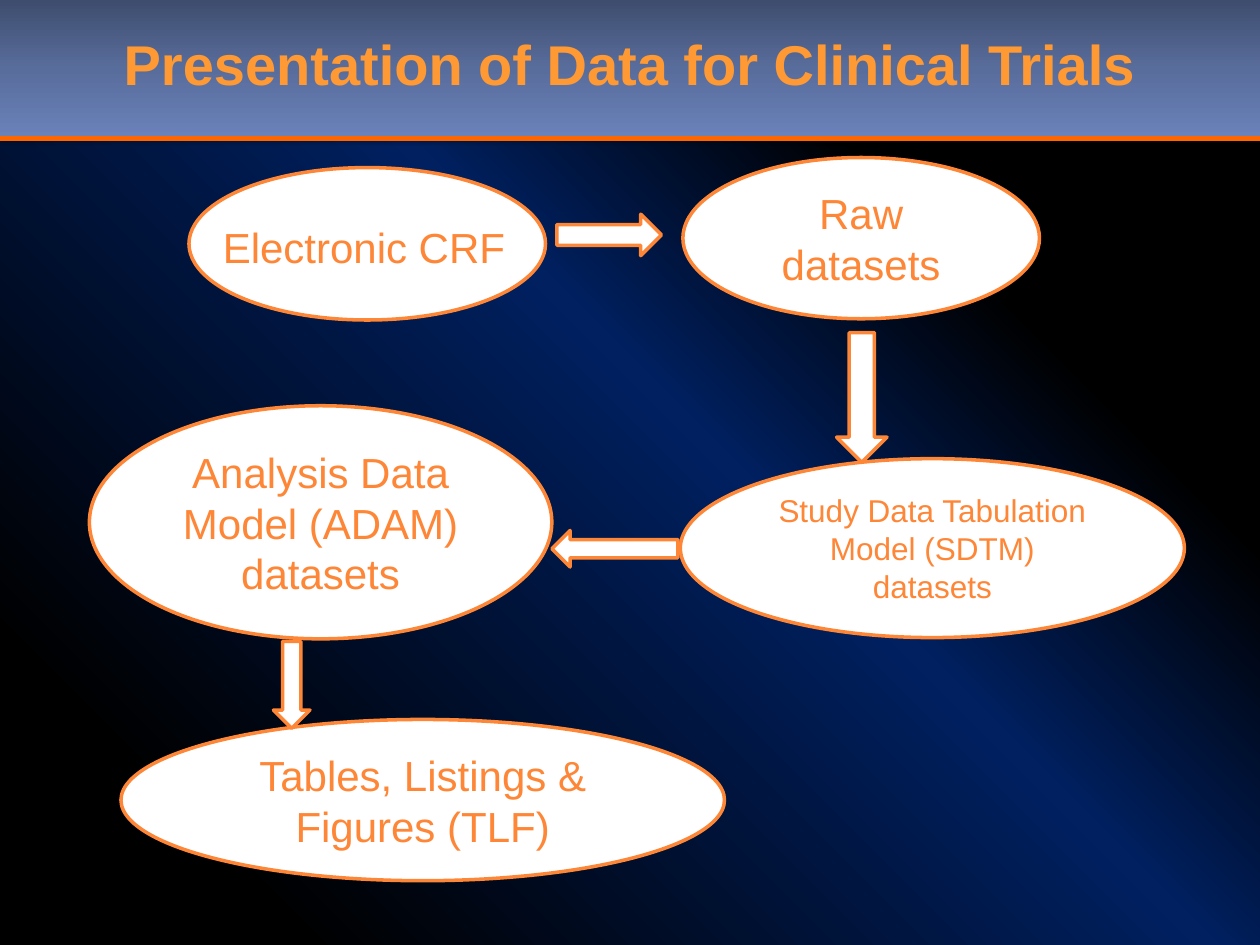
import pptx
import pptx.util
import pptx.dml.color
import pptx.enum.shapes
import pptx.enum.text
import pptx.oxml
import pptx.oxml.ns
from dataclasses import dataclass

Inches = pptx.util.Inches
Pt = pptx.util.Pt
SHAPE = pptx.enum.shapes.MSO_SHAPE
ALIGN = pptx.enum.text.PP_ALIGN
ANCHOR = pptx.enum.text.MSO_ANCHOR
qn = pptx.oxml.ns.qn
NAMESPACE = 'xmlns:a="http://schemas.openxmlformats.org/drawingml/2006/main"'


@dataclass(frozen=True)
class Theme:
    font: str = "Arial"
    title_color: str = "FF9933"
    rule_color: str = "FF6600"
    accent: str = "FE8637"
    node_fill: str = "FFFFFF"
    shadow: str = "000000"
    background: tuple = ((14, "000000"), (55, "002060"), (75, "000000"))
    banner: tuple = ((0, "3E4D6E"), (50, "596D9C"), (100, "6982B9"))
    title_size: int = 32
    node_size: int = 24
    small_size: int = 18
    outline: int = 2
    rule_width: int = 3


THEME = Theme()


def rgb(value):
    return pptx.dml.color.RGBColor.from_string(value)


def inches(box):
    return [Inches(length) for length in box]


def apply_gradient(fill, owner, stops, angle):
    """Fill with any number of (percent, colour) stops; angle is counterclockwise."""
    fill.gradient()
    fill.gradient_angle = angle
    stop_list = next(owner.iter(qn("a:gsLst")))
    for stop in list(stop_list):
        stop_list.remove(stop)
    for percent, color in stops:
        stop_list.append(pptx.oxml.parse_xml(
            f'<a:gs {NAMESPACE} pos="{percent * 1000}"><a:srgbClr val="{color}"/></a:gs>'))


def outer_shadow(blur, distance, direction, opacity):
    return pptx.oxml.parse_xml(
        f'<a:effectLst {NAMESPACE}><a:outerShdw blurRad="{Pt(blur)}" dist="{Pt(distance)}" '
        f'dir="{direction * 60000}" algn="ctr" rotWithShape="0">'
        f'<a:srgbClr val="{THEME.shadow}"><a:alpha val="{opacity * 1000}"/></a:srgbClr>'
        '</a:outerShdw></a:effectLst>')


def add_run(paragraph, text, size, color, bold=False):
    run = paragraph.add_run()
    run.text = text
    run.font.name = THEME.font
    run.font.size = Pt(size)
    run.font.bold = bold
    run.font.color.rgb = rgb(color)


def add_outlined(slide, kind, box):
    shape = slide.shapes.add_shape(kind, *inches(box))
    shape.shadow.inherit = False
    shape.fill.solid()
    shape.fill.fore_color.rgb = rgb(THEME.node_fill)
    shape.line.color.rgb = rgb(THEME.accent)
    shape.line.width = Pt(THEME.outline)
    return shape


def add_node(slide, box, text, size=THEME.node_size):
    """Ellipse with centred, wrapped text."""
    node = add_outlined(slide, SHAPE.OVAL, box)
    if text:
        frame = node.text_frame
        frame.word_wrap = True
        frame.vertical_anchor = ANCHOR.MIDDLE
        paragraph = frame.paragraphs[0]
        paragraph.alignment = ALIGN.CENTER
        add_run(paragraph, text, size, THEME.accent)


def add_header(slide, box, text):
    left, top, width, height = box
    title = slide.shapes.title

    # Gradient banner and rule, both behind the title
    banner = slide.shapes.add_shape(SHAPE.RECTANGLE, *inches(box))
    apply_gradient(banner.fill, banner.element, THEME.banner, 270)
    banner.line.fill.background()
    banner.element.spPr.append(outer_shadow(3.1, 1.8, 90, 35))

    rule_top = Inches(top + height + 0.01)
    rule = slide.shapes.add_connector(
        pptx.enum.shapes.MSO_CONNECTOR.STRAIGHT,
        Inches(left), rule_top, Inches(left + width), rule_top)
    rule.line.color.rgb = rgb(THEME.rule_color)
    rule.line.width = Pt(THEME.rule_width)
    rule.element.spPr.append(pptx.oxml.parse_xml(f"<a:effectLst {NAMESPACE}/>"))
    for part in (banner, rule):
        title.element.addprevious(part.element)

    # Title with a hard text shadow
    title.left, title.top, title.width, title.height = inches(box)
    title.text_frame.vertical_anchor = ANCHOR.MIDDLE
    paragraph = title.text_frame.paragraphs[0]
    paragraph.alignment = ALIGN.CENTER
    paragraph.line_spacing = 0.85
    add_run(paragraph, text, THEME.title_size, THEME.title_color, bold=True)
    run_fill = next(next(title.element.iter(qn("a:rPr"))).iter(qn("a:solidFill")))
    run_fill.addnext(outer_shadow(0, 2.5, 45, 100))


def add_flow(slide, box):
    """Data flow from case report form to final tables, placed within the box."""
    left, top = box[:2]

    def place(x, y, width, height):
        return left + x, top + y, width, height

    # Stages
    add_node(slide, place(1.5, 0.23, 2.83, 1.21), "")
    label = slide.shapes.add_textbox(*inches(place(1.67, 0.61, 2.67, 0.5)))
    label.text_frame.word_wrap = True
    add_run(label.text_frame.paragraphs[0], "Electronic CRF",
            THEME.node_size, THEME.accent)

    add_node(slide, place(5.42, 0.15, 2.83, 1.28), "Raw datasets")
    add_node(slide, place(0.71, 2.12, 3.67, 1.85), "Analysis Data Model (ADAM) datasets")
    add_node(slide, place(5.4, 2.54, 4, 1.42),
             "Study Data Tabulation Model (SDTM) datasets", THEME.small_size)
    add_node(slide, place(0.96, 4.61, 4.79, 1.28), "Tables, Listings & Figures (TLF)")

    # Arrows between stages
    for kind, arrow_box in (
        (SHAPE.RIGHT_ARROW, (4.42, 0.6, 0.83, 0.33)),
        (SHAPE.LEFT_ARROW, (4.38, 3.11, 1, 0.29)),
        (SHAPE.DOWN_ARROW, (6.64, 1.54, 0.4, 1.03)),
        (SHAPE.DOWN_ARROW, (2.17, 3.99, 0.29, 0.69)),
    ):
        add_outlined(slide, kind, place(*arrow_box))


def main():
    presentation = pptx.Presentation()
    presentation.slide_width = Inches(10)
    presentation.slide_height = Inches(7.5)
    slide = presentation.slides.add_slide(presentation.slide_layouts.get_by_name("Title Only"))
    apply_gradient(slide.background.fill, slide.element, THEME.background, 45)
    add_header(slide, (0, 0, 10, 1.09), "Presentation of Data for Clinical Trials")
    add_flow(slide, (0, 1.1, 10, 6.4))
    presentation.save("out.pptx")


if __name__ == "__main__":
    main()
